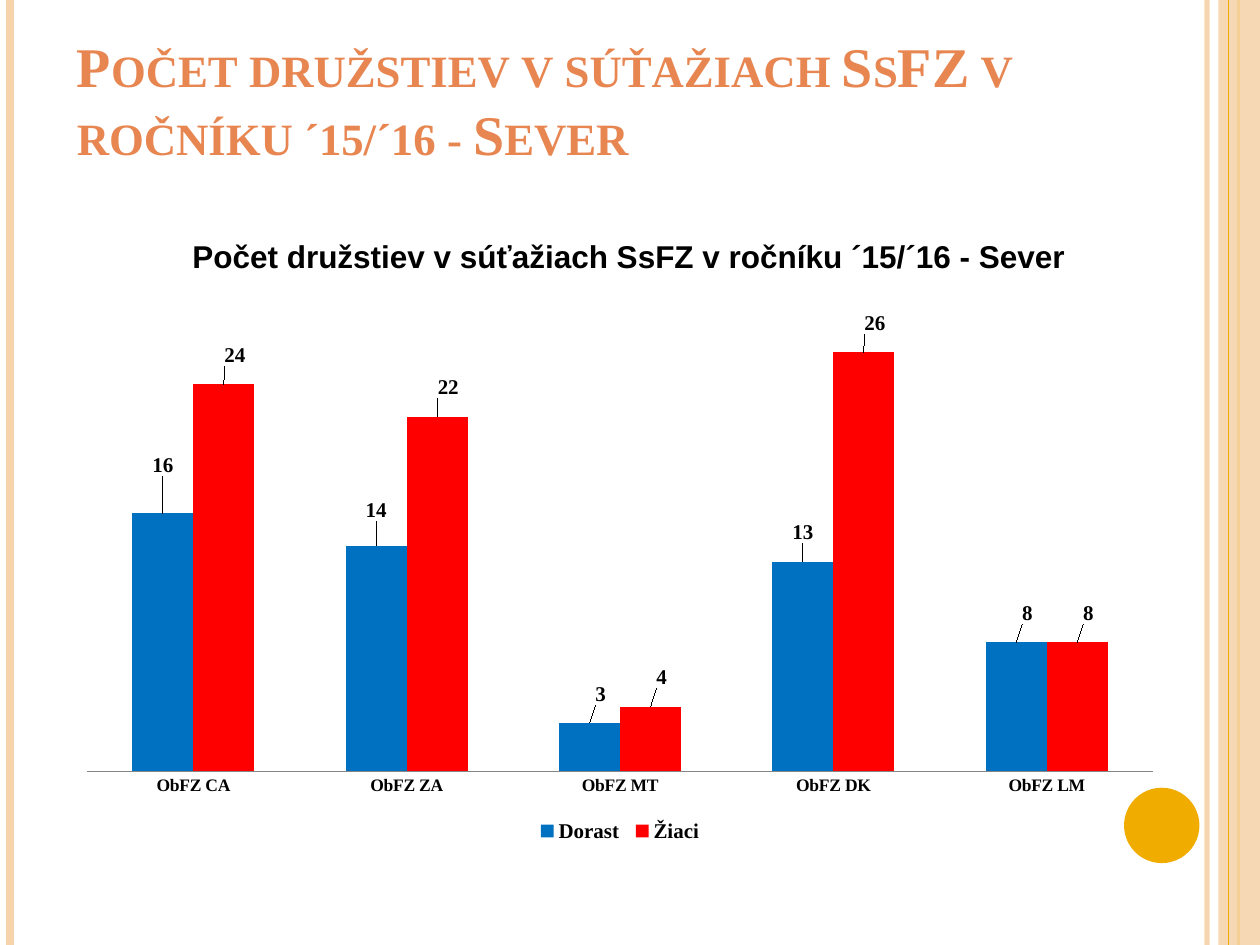
"""Build a slide comparing youth and pupil team counts by regional association."""
import pptx
import pptx.chart.data
import pptx.dml.color
import pptx.enum.chart
import pptx.enum.shapes
import pptx.enum.text
import pptx.oxml
import pptx.oxml.ns
import pptx.util
from pptx.util import Cm, Pt

WIDTH, HEIGHT = 25.4, 19.05
SERIF = "Times New Roman"
HEADING = "Počet družstiev v súťažiach SsFZ v ročníku ´15/´16 - Sever"
PEACH, AMBER, ORANGE = "F6D3AB", "F0AD00", "E88651"
CATEGORIES = ["ObFZ CA", "ObFZ ZA", "ObFZ MT", "ObFZ DK", "ObFZ LM"]
SERIES = [
    {
        "name": "Dorast",
        "color": "0070C0",
        "values": [16, 14, 3, 13, 8],
        "label_shifts": [(0, -0.05), (0, -0.03), (0.01, -0.02), (0, -0.02), (0.01, -0.02)],
    },
    {
        "name": "Žiaci",
        "color": "FF0000",
        "values": [24, 22, 4, 26, 8],
        "label_shifts": [(0.01, -0.02), (0.01, -0.02), (0.01, -0.02), (0.01, -0.02), (0.01, -0.02)],
    },
]
BACK_LINES = [(24.33, PEACH, 3, 93), (0.2, PEACH, 4.5, 100), (24.97, AMBER, 1.5, 100)]
FRONT_LINES = [(24.77, AMBER, 0.75, 100)]


def rgb(color):
    return pptx.dml.color.RGBColor.from_string(color)


def set_font(font, size, color="000000", name=SERIF):
    font.size, font.bold, font.name = Pt(size), True, name
    font.color.rgb = rgb(color)


def append_xml(parent, tag, **attributes):
    child = pptx.oxml.ns.qn(tag)
    element = parent.makeelement(child, {key: str(value) for key, value in attributes.items()})
    parent.append(element)
    return element


def set_opacity(shape, percent):
    if percent < 100:
        color = shape._element.xpath(".//a:srgbClr")[0]
        append_xml(color, "a:alpha", val=percent * 1000)


def add_vertical_line(slide, left, color, width, opacity):
    line = slide.shapes.add_connector(
        pptx.enum.shapes.MSO_CONNECTOR.STRAIGHT, Cm(left), 0, Cm(left), Cm(HEIGHT)
    )
    line.line.color.rgb = rgb(color)
    line.line.width = Pt(width)
    set_opacity(line, opacity)
    append_xml(line._element.spPr, "a:effectLst")


def add_filled_shape(slide, kind, box, color, opacity=100):
    shape = slide.shapes.add_shape(kind, *map(Cm, box))
    shape.shadow.inherit = False
    shape.fill.solid()
    shape.fill.fore_color.rgb = rgb(color)
    shape.line.fill.background()
    set_opacity(shape, opacity)


def add_heading(slide):
    box = slide.shapes.add_textbox(Cm(1.3), Cm(0.53), Cm(22.02), Cm(2.95))
    frame = box.text_frame
    frame.word_wrap = True
    frame.vertical_anchor = pptx.enum.text.MSO_ANCHOR.BOTTOM
    run = frame.paragraphs[0].add_run()
    run.text = HEADING
    set_font(run.font, 32, ORANGE)
    run.font._element.set("cap", "small")


def set_layout(parent, index, inner=False, **position):
    for old_layout in parent.xpath("c:layout"):
        parent.remove(old_layout)
    layout = append_xml(parent, "c:layout")
    parent.insert(index, layout)
    manual = append_xml(layout, "c:manualLayout")
    if inner:
        append_xml(manual, "c:layoutTarget", val="inner")
    if "w" in position:
        for axis in "xy":
            append_xml(manual, f"c:{axis}Mode", val="edge")
    for key, value in position.items():
        append_xml(manual, f"c:{key}", val=value)


def add_team_chart(slide):
    data = pptx.chart.data.CategoryChartData()
    data.categories = CATEGORIES
    for entry in SERIES:
        data.add_series(entry["name"], entry["values"])
    chart = slide.shapes.add_chart(
        pptx.enum.chart.XL_CHART_TYPE.COLUMN_CLUSTERED,
        Cm(1.3), Cm(4.11), Cm(22.4), Cm(13), data,
    ).chart
    chart.font.size, chart.font.name = Pt(10), "Arial"
    chart.font.color.rgb = rgb("000000")

    title_run = chart.chart_title.text_frame.paragraphs[0].add_run()
    title_run.text = HEADING
    set_font(title_run.font, 18, name="Arial")
    chart.chart_title.include_in_layout = False

    chart.has_legend = True
    chart.legend.position = pptx.enum.chart.XL_LEGEND_POSITION.BOTTOM
    chart.legend.include_in_layout = False
    set_font(chart.legend.font, 12)

    value_axis, category_axis = chart.value_axis, chart.category_axis
    value_axis.minimum_scale, value_axis.maximum_scale = 0, 30
    value_axis.has_major_gridlines = False
    value_axis.visible = False
    category_axis.major_tick_mark = pptx.enum.chart.XL_TICK_MARK.NONE
    category_axis.format.line.color.rgb = rgb("868686")
    set_font(category_axis.tick_labels.font, 10)

    plot = chart.plots[0]
    plot.vary_by_categories = False
    plot.gap_width, plot.overlap = 150, 0
    for series, entry in zip(plot.series, SERIES):
        series.format.fill.solid()
        series.format.fill.fore_color.rgb = rgb(entry["color"])
        series.data_labels.show_value = True
        set_font(series.data_labels.font, 12)
        for index, (x, y) in enumerate(entry["label_shifts"]):
            label = series.points[index].data_label
            set_font(label.font, 12)
            label.position = pptx.enum.chart.XL_LABEL_POSITION.OUTSIDE_END
            element = series._element.xpath("c:dLbls/c:dLbl")[index]
            set_layout(element, 1, x=x, y=y)

    root = chart.element
    set_layout(root.xpath(".//c:plotArea")[0], 0, True, x=0.02, y=0.13, w=0.96, h=0.75)
    set_layout(root.xpath("c:chart/c:title")[0], 1, x=0.11, y=0.04, w=0.78, h=0.06)
    set_layout(root.xpath(".//c:legend")[0], 1, x=0.42, y=0.95, w=0.16, h=0.05)


def main():
    presentation = pptx.Presentation()
    presentation.slide_width, presentation.slide_height = Cm(WIDTH), Cm(HEIGHT)
    slide = presentation.slides.add_slide(presentation.slide_layouts[6])
    shapes = pptx.enum.shapes.MSO_SHAPE
    for line in BACK_LINES:
        add_vertical_line(slide, *line)
    add_filled_shape(slide, shapes.RECTANGLE, (24.56, 0, 0.84, HEIGHT), PEACH, 87)
    for line in FRONT_LINES:
        add_vertical_line(slide, *line)
    add_filled_shape(slide, shapes.OVAL, (22.66, 15.88, 1.52, 1.52), AMBER)
    add_heading(slide)
    add_team_chart(slide)
    presentation.save("out.pptx")


if __name__ == "__main__":
    main()
